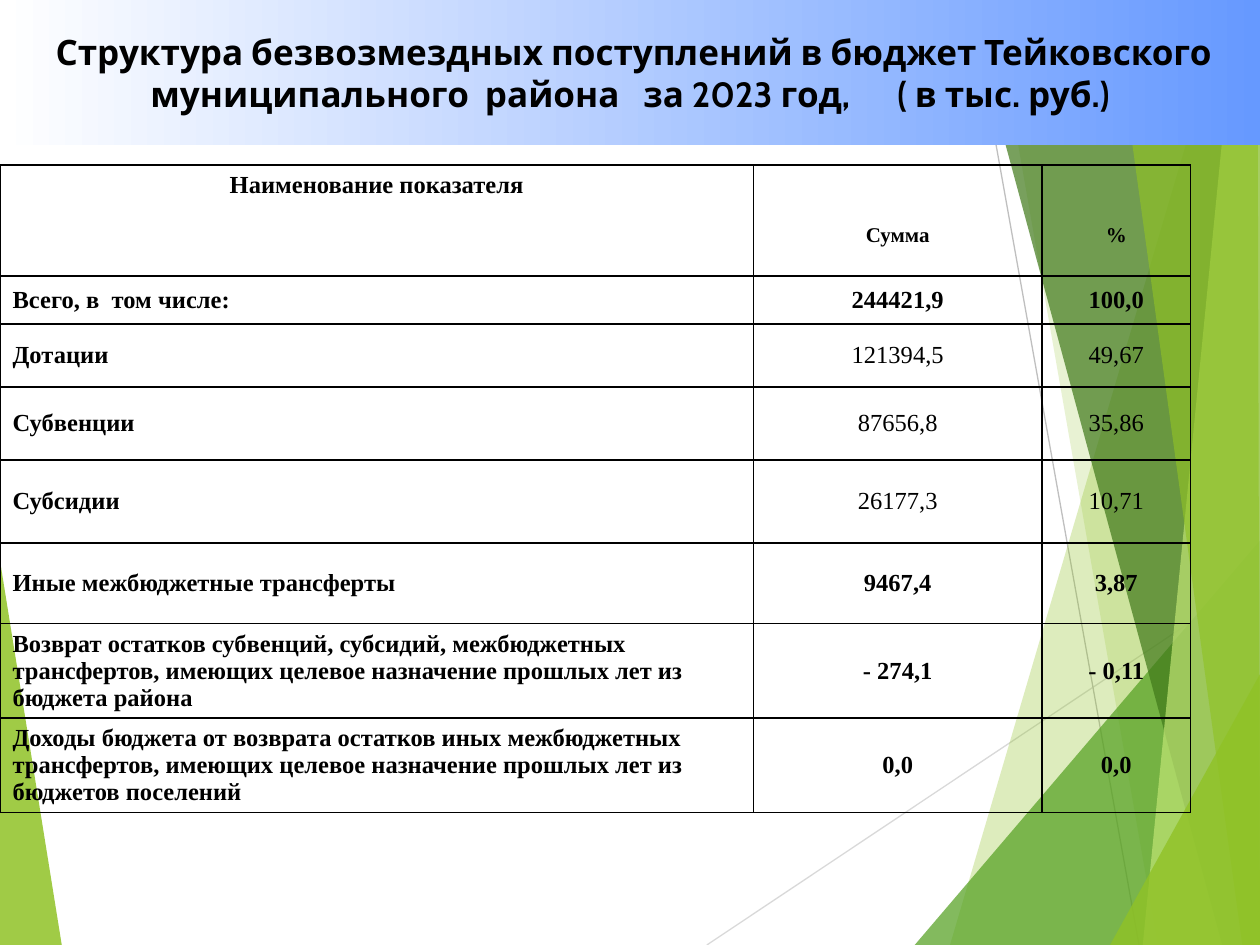
from lxml.etree import SubElement
from pptx import Presentation
from pptx.dml.color import RGBColor
from pptx.enum.shapes import MSO_CONNECTOR, MSO_SHAPE
from pptx.enum.text import MSO_ANCHOR, PP_ALIGN
from pptx.oxml.ns import qn
from pptx.util import Inches, Pt

BLACK = RGBColor(0, 0, 0)
WHITE = RGBColor(255, 255, 255)
BLUE = RGBColor(0x66, 0x99, 0xFF)
LIME = RGBColor(0x90, 0xC2, 0x26)
PALE = RGBColor(0xC0, 0xE4, 0x74)
GREEN = RGBColor(0x54, 0xA0, 0x21)
DARK = RGBColor(0x3F, 0x78, 0x19)
SILVER = RGBColor(0xD9, 0xD9, 0xD9)
GRAY = RGBColor(0xBF, 0xBF, 0xBF)

WIDE, HIGH = 10, 7.5

# Background bands: colour, opacity in percent, corners
EDGE = (LIME, 85, [(0, 4.45), (0.49, HIGH), (0, HIGH)])
BANDS = [
    (LIME, 30, [(9.75, 0), (7.54, HIGH), (WIDE, HIGH), (WIDE, 0)]),
    (LIME, 20, [(7.88, 0), (9.19, HIGH), (WIDE, HIGH), (WIDE, 0)]),
    (GREEN, 72, [(7.26, HIGH), (WIDE, 4.29), (WIDE, HIGH)]),
    (DARK, 70, [(7.67, 0), (9.7, HIGH), (WIDE, HIGH), (WIDE, 0)]),
    (PALE, 70, [(9.81, 0), (9.07, HIGH), (WIDE, HIGH), (WIDE, 0)]),
    (LIME, 65, [(8.83, 0), (9.86, HIGH), (WIDE, HIGH), (9.98, 0)]),
    (LIME, 80, [(8.81, HIGH), (WIDE, 5.35), (WIDE, HIGH)]),
]

# A number between texts is a space widened by so many points
TITLE = ("Структура безвозмездных поступлений в бюджет Тейковского "
         "муниципального", 4.5, "района", 9, "за 2023 год,", 22.5,
         "( в тыс. руб.)")
HEAD = ("Наименование показателя", "Сумма", "%")
# Name, sum, share, row height, bold figures
ROWS = [
    (("Всего, в", 3.5, "том числе:"), "244421,9", "100,0", 0.38, True),
    ("Дотации", "121394,5", "49,67", 0.5, False),
    ("Субвенции", "87656,8", "35,86", 0.58, False),
    ("Субсидии", "26177,3", "10,71", 0.66, False),
    ("Иные межбюджетные трансферты", "9467,4", "3,87", 0.64, True),
    ("Возврат остатков субвенций, субсидий, межбюджетных трансфертов, "
     "имеющих целевое назначение прошлых лет из бюджета района",
     "- 274,1", "- 0,11", 0.75, True),
    ("Доходы бюджета от возврата остатков иных межбюджетных трансфертов, "
     "имеющих целевое назначение прошлых лет из бюджетов поселений",
     "0,0", "0,0", 0.75, True),
]
COLS = (5.98, 2.29, 1.18)
HEAD_HIGH = 0.88


def put(frame, text, font="Times New Roman", size=14, bold=True,
        align=PP_ALIGN.CENTER, indent=0):
    frame.word_wrap = True
    para = frame.paragraphs[0]
    para.alignment = align
    if indent:
        para._p.get_or_add_pPr().set("indent", str(Inches(indent)))
    for part in [text] if isinstance(text, str) else text:
        gap = not isinstance(part, str)
        run = para.add_run()
        run.text = " " if gap else part
        run.font.name = font
        run.font.size = Pt(size)
        run.font.bold = bold
        run.font.color.rgb = BLACK
        if gap:
            run._r.get_or_add_rPr().set("spc", str(int(part * 100)))


class Page:
    def __init__(self, slide):
        self.slide = slide
        self.shapes = slide.shapes

    def band(self, color, alpha, points):
        spots = [(Inches(x), Inches(y)) for x, y in points]
        pen = self.shapes.build_freeform(*spots[0])
        pen.add_line_segments(spots[1:], close=True)
        shape = pen.convert_to_shape()
        shape.shadow.inherit = False
        shape.line.fill.background()
        shape.fill.solid()
        shape.fill.fore_color.rgb = color
        tint = shape.element.spPr.find(qn("a:solidFill"))[0]
        SubElement(tint, qn("a:alpha"), val=str(alpha * 1000))

    def line(self, color, *ends):
        line = self.shapes.add_connector(
            MSO_CONNECTOR.STRAIGHT, *[Inches(end) for end in ends])
        line.line.color.rgb = color
        line.line.width = Pt(0.75)
        SubElement(line.element.spPr, qn("a:effectLst"))

    def title(self, text, high):
        box = self.shapes.add_shape(
            MSO_SHAPE.RECTANGLE, 0, 0, Inches(WIDE), Inches(high))
        box.shadow.inherit = False
        box.line.fill.background()
        box.fill.gradient()
        box.fill.gradient_angle = 0
        for stop, color in zip(box.fill.gradient_stops, (WHITE, BLUE)):
            stop.color.rgb = color
        box.text_frame.vertical_anchor = MSO_ANCHOR.MIDDLE
        put(box.text_frame, text, font="Cabin", size=20, indent=0.06)

    def cell(self, cell, text, anchor=MSO_ANCHOR.MIDDLE, **form):
        props = cell._tc.get_or_add_tcPr()
        for side in "LRTB":
            edge = SubElement(props, qn("a:ln" + side), w=str(Pt(1)))
            fill = SubElement(edge, qn("a:solidFill"))
            SubElement(fill, qn("a:srgbClr"), val=str(BLACK))
        cell.fill.background()
        cell.vertical_anchor = anchor
        put(cell.text_frame, text, **form)

    def table(self, top):
        highs = [HEAD_HIGH] + [row[3] for row in ROWS]
        table = self.shapes.add_table(
            len(highs), len(COLS), 0, Inches(top),
            Inches(sum(COLS)), Inches(sum(highs))).table
        table.first_row = table.horz_banding = False
        for col, wide in zip(table.columns, COLS):
            col.width = Inches(wide)
        for row, high in zip(table.rows, highs):
            row.height = Inches(high)
        # Header
        self.cell(table.cell(0, 0), HEAD[0], anchor=MSO_ANCHOR.TOP)
        for col in (1, 2):
            cell = table.cell(0, col)
            self.cell(cell, HEAD[col], anchor=MSO_ANCHOR.BOTTOM, size=12)
            cell.margin_bottom = Inches(0.23)
        # Body
        for num, (name, total, share, _, bold) in enumerate(ROWS, 1):
            self.cell(table.cell(num, 0), name, align=PP_ALIGN.LEFT)
            self.cell(table.cell(num, 1), total, bold=bold)
            self.cell(table.cell(num, 2), share, bold=bold)


def main():
    deck = Presentation()
    deck.slide_width = Inches(WIDE)
    deck.slide_height = Inches(HIGH)
    page = Page(deck.slides.add_slide(deck.slide_layouts[6]))
    # Background
    page.band(*EDGE)
    page.line(SILVER, 5.61, HIGH, WIDE, 4.57)
    page.line(GRAY, 7.7, 0, 9.04, HIGH)
    for band in BANDS:
        page.band(*band)
    # Content
    page.title(TITLE, 1.15)
    page.table(1.31)
    deck.save("out.pptx")


if __name__ == "__main__":
    main()
